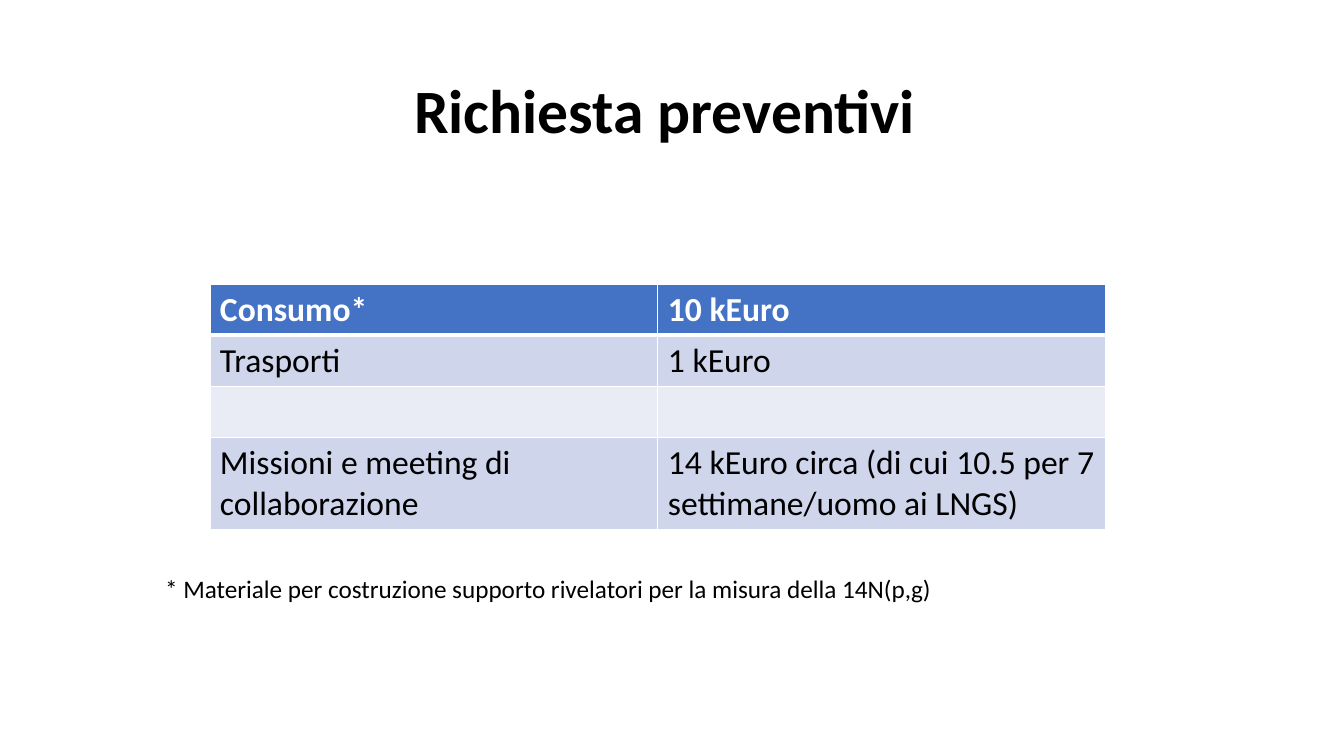
from dataclasses import dataclass

import lxml.etree
import pptx
import pptx.dml.color
import pptx.enum.text
import pptx.oxml.ns
import pptx.util

Cm = pptx.util.Cm
Pt = pptx.util.Pt

FONT = "Calibri"
COLORS = {
    "text": "000000",
    "white": "FFFFFF",
    "header": "4472C4",
    "band": "CFD5EA",
    "light": "E9EBF5",
}


@dataclass(frozen=True)
class BudgetRow:
    item: str
    amount: str
    height: float
    fill: str
    color: str = "text"
    bold: bool = False
    top: float = 1
    bottom: float = 1


BUDGET = [
    BudgetRow("Consumo*", "10 kEuro", 1.29, "header", "white", True, bottom=3),
    BudgetRow("Trasporti", "1 kEuro", 1.29, "band", top=3),
    BudgetRow("", "", 1.29, "light"),
    BudgetRow(
        "Missioni e meeting di collaborazione",
        "14 kEuro circa (di cui 10.5 per 7 settimane/uomo ai LNGS)",
        2.31,
        "band",
    ),
]


def rgb(name: str) -> pptx.dml.color.RGBColor:
    return pptx.dml.color.RGBColor.from_string(COLORS[name])


def style(paragraph, size: float, color: str = "text", bold: bool = False) -> None:
    paragraph.font.name = FONT
    paragraph.font.size = Pt(size)
    paragraph.font.bold = bold
    paragraph.font.color.rgb = rgb(color)


def draw_borders(cell, row: BudgetRow) -> None:
    properties = cell._tc.get_or_add_tcPr()
    qn = pptx.oxml.ns.qn
    for side, width in (("L", 1), ("R", 1), ("T", row.top), ("B", row.bottom)):
        line = lxml.etree.SubElement(properties, qn(f"a:ln{side}"), w=str(Pt(width)))
        solid = lxml.etree.SubElement(line, qn("a:solidFill"))
        lxml.etree.SubElement(solid, qn("a:srgbClr"), val=COLORS["white"])


def draw_cell(cell, text: str, row: BudgetRow) -> None:
    draw_borders(cell, row)
    cell.fill.solid()
    cell.fill.fore_color.rgb = rgb(row.fill)
    cell.text = text
    style(cell.text_frame.paragraphs[0], 24, row.color, row.bold)


def draw_title(slide) -> None:
    title = slide.shapes.title
    title.left, title.top, title.width, title.height = Cm(2.33), Cm(1.01), Cm(29.21), Cm(3.68)
    title.text_frame.text = "Richiesta preventivi "
    title.text_frame.vertical_anchor = pptx.enum.text.MSO_ANCHOR.MIDDLE
    heading = title.text_frame.paragraphs[0]
    heading.alignment = pptx.enum.text.PP_ALIGN.CENTER
    heading.line_spacing = 0.9
    style(heading, 44, bold=True)


def draw_budget(slide, rows: list[BudgetRow]) -> None:
    height = Cm(sum(row.height for row in rows))
    budget = slide.shapes.add_table(len(rows), 2, Cm(5.29), Cm(7.16), Cm(22.58), height).table
    for table_row, row in zip(budget.rows, rows):
        table_row.height = Cm(row.height)
        for cell, text in zip(table_row.cells, (row.item, row.amount)):
            draw_cell(cell, text, row)


def draw_footnote(slide) -> None:
    footnote = slide.shapes.add_textbox(Cm(3.91), Cm(14.32), Cm(28.85), Cm(1.8)).text_frame
    footnote.word_wrap = True
    footnote.text = "* Materiale per costruzione supporto rivelatori per la misura della 14N(p,g)"
    style(footnote.paragraphs[0], 18)


def main() -> None:
    presentation = pptx.Presentation()
    presentation.slide_width = Cm(33.87)
    presentation.slide_height = Cm(19.05)
    slide = presentation.slides.add_slide(presentation.slide_layouts[5])
    draw_title(slide)
    draw_budget(slide, BUDGET)
    draw_footnote(slide)
    presentation.save("out.pptx")


if __name__ == "__main__":
    main()
